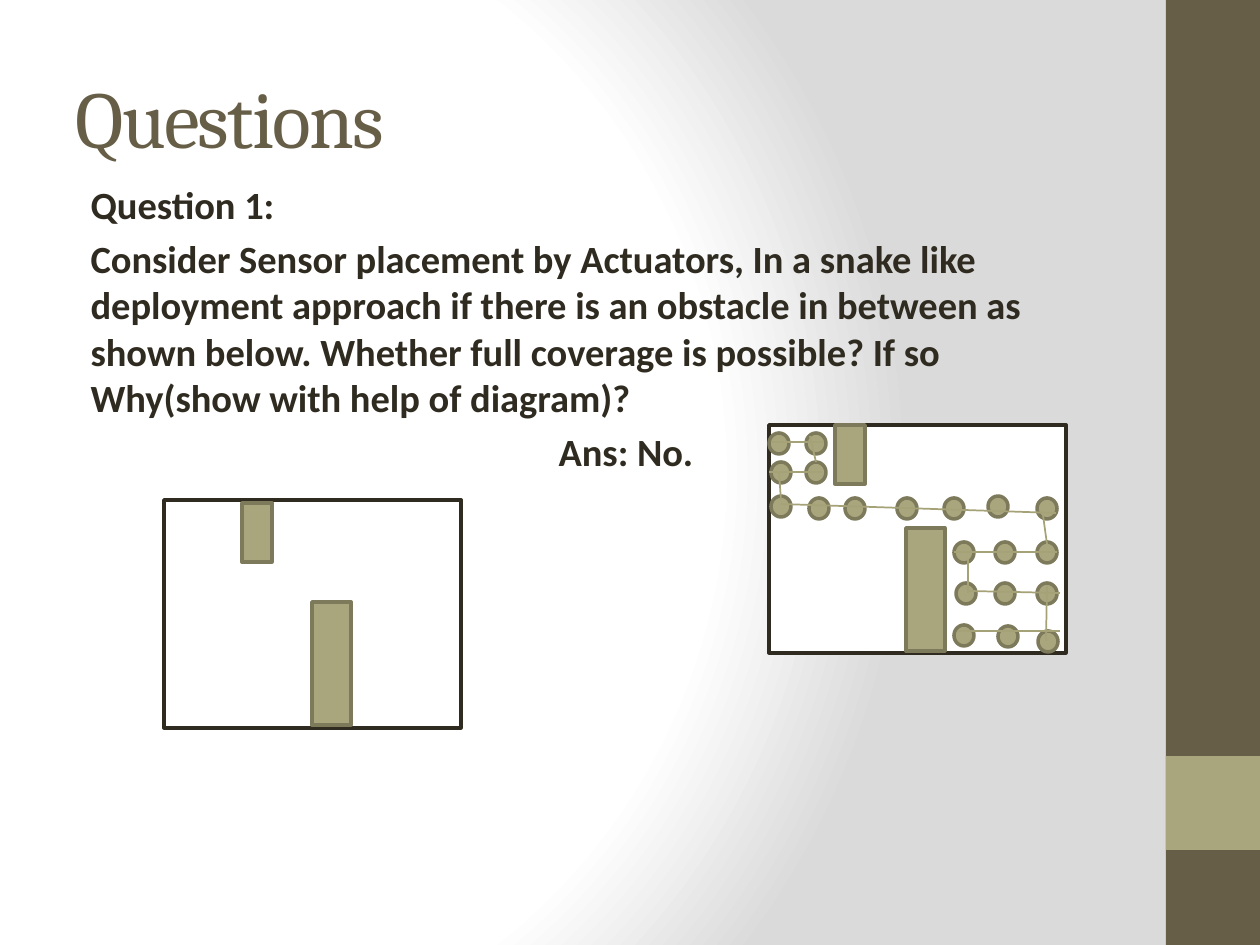
"""Build the Questions slide about sensor deployment around obstacles."""
from lxml import etree
from pptx import Presentation
from pptx import util as u
from pptx.dml.color import RGBColor
from pptx.enum import shapes, text
from pptx.oxml import ns

PX = 914400 / 126
BROWN = RGBColor(0x67, 0x5E, 0x47)
OLIVE = RGBColor(0xA9, 0xA5, 0x7C)
OLIVE_EDGE = RGBColor(0x7D, 0x7A, 0x5C)
ROUTE = RGBColor(0xA6, 0xA2, 0x78)
INK = RGBColor(0x2F, 0x2B, 0x20)
WHITE = RGBColor(0xFF, 0xFF, 0xFF)
GRADIENT_STOPS = ((0, "FFFFFF"), (75, "FFFFFF"), (100, "DADADA"))

BODY_LEFT = 15
ANSWER_LEFT = 483
BODY = (
    ("Question 1:", BODY_LEFT),
    ("Consider Sensor placement by Actuators, In a snake like deployment "
     "approach if there is an obstacle in between as shown below. Whether full "
     "coverage is possible? If so Why(show with help of diagram)?", BODY_LEFT),
    ("Ans: No.", ANSWER_LEFT),
)
ROOM_SIZE = (297, 228)
TALL_OBSTACLE = (39, 123)
SHORT_OBSTACLE = (30, 59)
SENSOR_SIZE = (20, 21)
SENSOR_ROWS = (
    (433, (769, 806)),
    (462, (771, 806)),
    (496, (771, 988)),
    (498, (809, 845, 897, 944, 1037)),
    (542, (954, 995, 1037)),
    (583, (956, 995, 1037)),
    (625, (954,)),
    (626, (998,)),
    (631, (1038,)),
)
ROUTE_LEGS = (
    (771, 442, 824, 442), (769, 472, 822, 472), (781, 504, 1056, 513),
    (954, 552, 1057, 552), (968, 591, 1060, 593), (958, 631, 1060, 631),
    (810, 436, 816, 462), (779, 472, 781, 500), (1043, 515, 1047, 544),
    (968, 593, 968, 559), (1047, 586, 1046, 641),
)


def px(*lengths):
    """Turn pixel lengths into EMU."""
    return [u.Emu(round(length * PX)) for length in lengths]


def paint_background(slide):
    """Fill the background with a radial gradient."""
    fill = slide.background.fill
    fill.gradient()
    gradient = slide.background._cSld.find(".//" + ns.qn("a:gradFill"))
    for child in list(gradient):
        gradient.remove(child)
    stops = etree.SubElement(gradient, ns.qn("a:gsLst"))
    for percent, colour in GRADIENT_STOPS:
        stop = etree.SubElement(stops, ns.qn("a:gs"), pos=str(percent * 1000))
        etree.SubElement(stop, ns.qn("a:srgbClr"), val=colour)
    circle = etree.SubElement(gradient, ns.qn("a:path"))
    circle.set("path", "circle")
    etree.SubElement(circle, ns.qn("a:fillToRect"),
                     l="20000", t="50000", r="100000", b="50000")


def place(placeholder, left, top, width, height, anchor):
    """Move a placeholder and return its text frame."""
    placeholder.left, placeholder.top, placeholder.width, placeholder.height = px(
        left, top, width, height)
    frame = placeholder.text_frame
    frame.word_wrap = True
    frame.auto_size = text.MSO_AUTO_SIZE.NONE
    frame.vertical_anchor = anchor
    return frame


def write(paragraph, words, *, font, size, colour, bold=False, spacing=0, indent=0):
    """Write a left-aligned, unbulleted paragraph in one format."""
    run = paragraph.add_run()
    run.text = words
    run.font.name, run.font.size, run.font.bold = font, u.Pt(size), bold
    run.font.color.rgb = colour
    if spacing:
        run.font._element.set("spc", str(spacing * 100))
    paragraph.alignment = text.PP_ALIGN.LEFT
    properties = paragraph._p.get_or_add_pPr()
    properties.set("marL", str(px(indent)[0]))
    properties.set("indent", "0")
    etree.SubElement(properties, ns.qn("a:buNone"))


def add_block(slide, left, top, size, fill, edge=None,
              kind=shapes.MSO_SHAPE.RECTANGLE):
    """Add a filled shape with an optional edge."""
    block = slide.shapes.add_shape(kind, *px(left, top, *size))
    block.shadow.inherit = False
    block.fill.solid()
    block.fill.fore_color.rgb = fill
    if edge is None:
        block.line.fill.background()
    else:
        block.line.color.rgb = edge
        block.line.width = u.Pt(2)


def add_room(slide, room, tall, short):
    """Add a room with its tall and short obstacles."""
    add_block(slide, *room, ROOM_SIZE, WHITE, INK)
    add_block(slide, *tall, TALL_OBSTACLE, OLIVE, OLIVE_EDGE)
    add_block(slide, *short, SHORT_OBSTACLE, OLIVE, OLIVE_EDGE)


def add_leg(slide, *ends):
    """Add one straight leg of the deployment route."""
    leg = slide.shapes.add_connector(shapes.MSO_CONNECTOR.STRAIGHT, *px(*ends))
    leg.line.color.rgb = ROUTE
    leg.line.width = u.Pt(1)
    etree.SubElement(leg._element.spPr, ns.qn("a:effectLst"))


def main():
    """Compose and save the slide."""
    deck = Presentation()
    deck.slide_width, deck.slide_height = px(1260, 945)
    slide = deck.slides.add_slide(deck.slide_layouts[1])
    paint_background(slide)
    add_block(slide, 1166, 0, (94, 945), BROWN)
    add_block(slide, 1166, 756, (94, 94), OLIVE)

    title = place(slide.shapes.title, 63, 38, 1050, 157, text.MSO_ANCHOR.MIDDLE)
    write(title.paragraphs[0], "Questions", font="Cambria", size=46,
          colour=BROWN, spacing=-1)
    body = place(slide.placeholders[1], 63, 175, 1050, 707, text.MSO_ANCHOR.TOP)
    for number, (words, indent) in enumerate(BODY):
        paragraph = body.add_paragraph() if number else body.paragraphs[0]
        write(paragraph, words, font="Calibri", size=22, colour=INK, bold=True,
              indent=indent)

    add_room(slide, room=(164, 500), tall=(312, 602), short=(242, 503))
    add_room(slide, room=(769, 425), tall=(906, 528), short=(835, 425))
    for top, lefts in SENSOR_ROWS:
        for left in lefts:
            add_block(slide, left, top, SENSOR_SIZE, OLIVE, OLIVE_EDGE,
                      shapes.MSO_SHAPE.OVAL)
    for leg in ROUTE_LEGS:
        add_leg(slide, *leg)
    deck.save("out.pptx")


if __name__ == "__main__":
    main()
